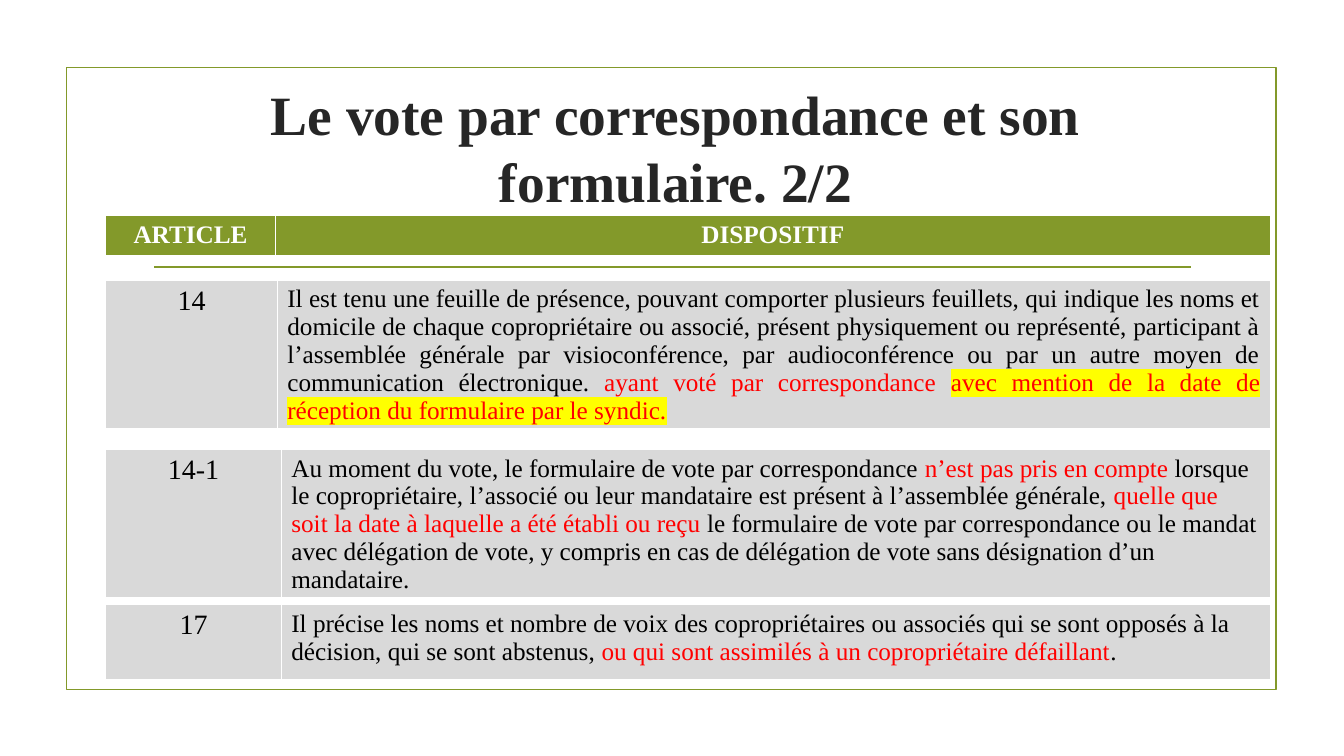
from dataclasses import dataclass

from lxml import etree
from pptx import Presentation
from pptx.dml.color import RGBColor
from pptx.enum.shapes import MSO_CONNECTOR, MSO_SHAPE
from pptx.enum.text import MSO_ANCHOR, PP_ALIGN
from pptx.oxml.ns import qn
from pptx.util import Inches, Pt

RECT, STRAIGHT = MSO_SHAPE.RECTANGLE, MSO_CONNECTOR.STRAIGHT
CENTER, LEFT, JUSTIFY = PP_ALIGN.CENTER, PP_ALIGN.LEFT, PP_ALIGN.JUSTIFY
MIDDLE, TOP = MSO_ANCHOR.MIDDLE, MSO_ANCHOR.TOP


@dataclass(frozen=True)
class Theme:
    font: str = "Times New Roman"
    green: str = "83992A"
    grey: str = "D9D9D9"
    white: str = "FFFFFF"
    black: str = "000000"
    red: str = "FF0000"
    yellow: str = "FFFF00"
    title: str = "262626"
    title_size: float = 39.6
    number_size: float = 20
    body_size: float = 18
    rule: float = 1.25


T = Theme()
WIDTH, HEIGHT = 13.33, 7.5
TABLE_LEFT, TABLE_WIDTH = 1.05, 11.55
BORDERS = (("a:lnL", 1), ("a:lnR", 1), ("a:lnT", 1), ("a:lnB", 3))

HEADER = (2.14, 0.41, 1.68, "ARTICLE", [("DISPOSITIF", T.white, None)], CENTER)
ARTICLES = [
    (2.78, 1.46, 1.70, "14", [
        ("Il est tenu une feuille de présence, pouvant comporter plusieurs feuillets, "
         "qui indique les noms et domicile de chaque copropriétaire ou associé, présent "
         "physiquement ou représenté, participant à l’assemblée générale par "
         "visioconférence, par audioconférence ou par un autre moyen de communication "
         "électronique. ", T.black, None),
        ("ayant voté par correspondance ", T.red, None),
        ("avec mention de la date de réception du formulaire par le syndic.",
         T.red, T.yellow)], JUSTIFY),
    (4.46, 1.46, 1.74, "14-1", [
        ("Au moment du vote, le formulaire de vote par correspondance ", T.black, None),
        ("n’est pas pris en compte ", T.red, None),
        ("lorsque le copropriétaire, l’associé ou leur mandataire est présent à "
         "l’assemblée générale, ", T.black, None),
        ("quelle que soit la date à laquelle a été établi ou reçu ", T.red, None),
        ("le formulaire de vote par correspondance ou le mandat avec délégation de vote, "
         "y compris en cas de délégation de vote sans désignation d’un mandataire.",
         T.black, None)], LEFT),
    (6.0, 0.75, 1.74, "17", [
        ("Il précise les noms et nombre de voix des copropriétaires ou associés qui se "
         "sont opposés à la décision, qui se sont abstenus, ", T.black, None),
        ("ou qui sont assimilés à un copropriétaire défaillant", T.red, None),
        (".", T.black, None)], LEFT),
]


def rgb(color):
    return RGBColor.from_string(color)


def add_solid(parent, tag, color):
    node = etree.SubElement(parent, qn(tag))
    etree.SubElement(node, qn("a:srgbClr")).set("val", color)
    return node


def write(tf, runs, size, align, bold=False):
    p = tf.paragraphs[0]
    p.alignment = align
    for text, color, highlight in runs:
        r = p.add_run()
        r.text = text
        r.font.name, r.font.size, r.font.bold = T.font, Pt(size), bold
        r.font.color.rgb = rgb(color)
        if highlight:
            mark = add_solid(r.font._element, "a:highlight", highlight)
            r.font._element.find(qn("a:solidFill")).addnext(mark)


def style_cell(cell, fill):
    cell.vertical_anchor = TOP
    tc_pr = cell._tc.get_or_add_tcPr()
    for tag, width in BORDERS:
        ln = etree.SubElement(tc_pr, qn(tag))
        ln.set("w", str(Pt(width)))
        add_solid(ln, "a:solidFill", T.white)
    cell.fill.solid()
    cell.fill.fore_color.rgb = rgb(fill)


def add_frame(s, x, y, w, h):
    sp = s.shapes.add_shape(RECT, Inches(x), Inches(y), Inches(w), Inches(h))
    sp.shadow.inherit = False
    sp.fill.background()
    sp.line.color.rgb = rgb(T.green)
    sp.line.width = Pt(T.rule)


def add_rule(s, x, y, w):
    line = s.shapes.add_connector(STRAIGHT, Inches(x), Inches(y), Inches(x + w), Inches(y))
    line.line.color.rgb = rgb(T.green)
    line.line.width = Pt(T.rule)
    etree.SubElement(line._element.spPr, qn("a:effectLst"))


def add_title(s, x, y, w, h, text):
    tf = s.shapes.add_textbox(Inches(x), Inches(y), Inches(w), Inches(h)).text_frame
    tf.word_wrap = True
    tf.vertical_anchor = MIDDLE
    write(tf, [(text, T.title, None)], T.title_size, CENTER, True)


def add_band(s, x, w, band, header=False):
    top, height, first, label, runs, align = band
    table = s.shapes.add_table(1, 2, Inches(x), Inches(top), Inches(w), Inches(height)).table
    table.first_row = header
    table.horz_banding = False
    table.columns[0].width = Inches(first)
    table.columns[1].width = Inches(w - first)
    fill, color = (T.green, T.white) if header else (T.grey, T.black)
    size = T.body_size if header else T.number_size
    for cell in table.rows[0].cells:
        style_cell(cell, fill)
    write(table.cell(0, 0).text_frame, [(label, color, None)], size, CENTER, header)
    write(table.cell(0, 1).text_frame, runs, T.body_size, align, header)


def build_slide(prs):
    s = prs.slides.add_slide(prs.slide_layouts[6])
    add_frame(s, 0.66, 0.67, 12, 6.17)
    add_rule(s, 1.53, 2.65, 10.28)
    for band in ARTICLES:
        add_band(s, TABLE_LEFT, TABLE_WIDTH, band)
    add_band(s, TABLE_LEFT, TABLE_WIDTH, HEADER, True)
    add_title(s, 1.45, 0.74, 10.5, 1.43, "Le vote par correspondance et son formulaire. 2/2")


def main():
    prs = Presentation()
    prs.slide_width, prs.slide_height = Inches(WIDTH), Inches(HEIGHT)
    build_slide(prs)
    prs.save("out.pptx")


if __name__ == "__main__":
    main()
